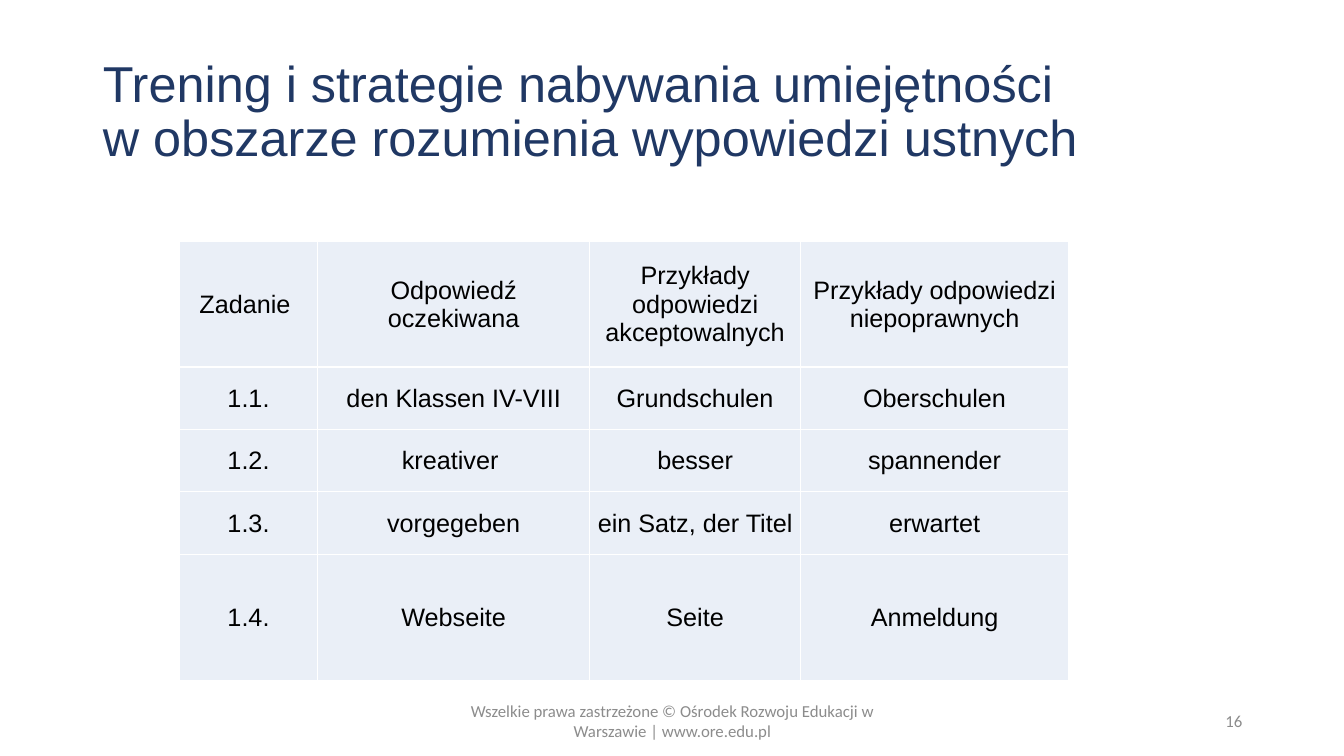
from lxml.etree import SubElement
from pptx import Presentation
from pptx.dml.color import RGBColor
from pptx.enum.text import MSO_ANCHOR, MSO_AUTO_SIZE, PP_ALIGN
from pptx.oxml.ns import qn
from pptx.util import Pt

PX = 9144
TITLE_FORMAT = {"name": "Arial", "size": Pt(36)}
CELL_FORMAT = {"name": "Arial", "size": Pt(18), "bold": False}
FOOTER_FORMAT = {"name": "Calibri", "size": Pt(12)}
FRAME_FORMAT = {
    "word_wrap": True,
    "auto_size": MSO_AUTO_SIZE.NONE,
    "vertical_anchor": MSO_ANCHOR.MIDDLE,
}
CELL_LAYOUT = {
    "vertical_anchor": MSO_ANCHOR.MIDDLE,
    "margin_left": 7 * PX,
    "margin_top": PX,
    "margin_right": 7 * PX,
    "margin_bottom": 0,
}

COLUMN_WIDTHS = [137, 270, 209, 266]
ROW_HEIGHTS = [125, 62, 62, 62, 125]
ANSWERS = [
    ["Zadanie ", "Odpowiedź oczekiwana", "Przykłady odpowiedzi akceptowalnych",
     "Przykłady odpowiedzi niepoprawnych"],
    ["1.1.", "den Klassen IV-VIII", "Grundschulen", "Oberschulen"],
    ["1.2.", "kreativer ", "besser", "spannender"],
    ["1.3.", "vorgegeben", "ein Satz, der Titel", "erwartet"],
    ["1.4.", "Webseite", "Seite", "Anmeldung"],
]


def color(value):
    return RGBColor.from_string(value)


def apply(target, values):
    for name, value in values.items():
        setattr(target, name, value)


def to_emu(box):
    return [length * PX for length in box]


def write(frame, text, font_format, font_color, align):
    frame.text = text
    para = frame.paragraphs[0]
    para.alignment = align
    for span in para.runs:
        apply(span.font, font_format)
        span.font.color.rgb = color(font_color)
    return para


def add_title(page, box, text):
    title = page.shapes.title
    apply(title, dict(zip(("left", "top", "width", "height"), to_emu(box))))
    apply(title.text_frame, FRAME_FORMAT)
    para = write(title.text_frame, text, TITLE_FORMAT, "203864", PP_ALIGN.LEFT)
    para.line_spacing = 0.9


def add_borders(cell, line_color):
    properties = cell._tc.get_or_add_tcPr()
    for side in ("lnL", "lnR", "lnT", "lnB"):
        line = SubElement(properties, qn(f"a:{side}"), w=str(Pt(1)))
        fill = SubElement(line, qn("a:solidFill"))
        SubElement(fill, qn("a:srgbClr"), val=line_color)


def add_answers(page, box):
    table = page.shapes.add_table(
        len(ANSWERS), len(COLUMN_WIDTHS), *to_emu(box)).table
    for column, width in zip(table.columns, COLUMN_WIDTHS):
        column.width = width * PX
    for row, height, texts in zip(table.rows, ROW_HEIGHTS, ANSWERS):
        row.height = height * PX
        for cell, text in zip(row.cells, texts):
            write(cell.text_frame, text, CELL_FORMAT, "000000", PP_ALIGN.CENTER)
            apply(cell, CELL_LAYOUT)
            add_borders(cell, "FFFFFF")
            cell.fill.solid()
            cell.fill.fore_color.rgb = color("EAEFF7")


def add_footer_text(page, box, text, align):
    frame = page.shapes.add_textbox(*to_emu(box)).text_frame
    apply(frame, FRAME_FORMAT)
    write(frame, text, FOOTER_FORMAT, "8C8C8C", align)


def add_footer(page, box):
    left, top, width, height = box
    notice_width, number_width = 450, 300
    add_footer_text(
        page, (left + (width - notice_width) // 2, top, notice_width, height),
        "Wszelkie prawa zastrzeżone © Ośrodek Rozwoju Edukacji w Warszawie"
        " | www.ore.edu.pl", PP_ALIGN.CENTER)
    add_footer_text(
        page, (left + width - number_width, top, number_width, height),
        "16", PP_ALIGN.RIGHT)


def main():
    deck = Presentation()
    deck.slide_width, deck.slide_height = to_emu((1333, 750))
    page = deck.slides.add_slide(deck.slide_layouts[5])
    add_title(page, (92, 40, 1150, 145),
              "Trening i strategie nabywania umiejętności \v"
              "w obszarze rozumienia wypowiedzi ustnych")
    add_footer(page, (92, 695, 1150, 40))
    add_answers(page, (178, 239, sum(COLUMN_WIDTHS), sum(ROW_HEIGHTS)))
    deck.save("out.pptx")


if __name__ == "__main__":
    main()
